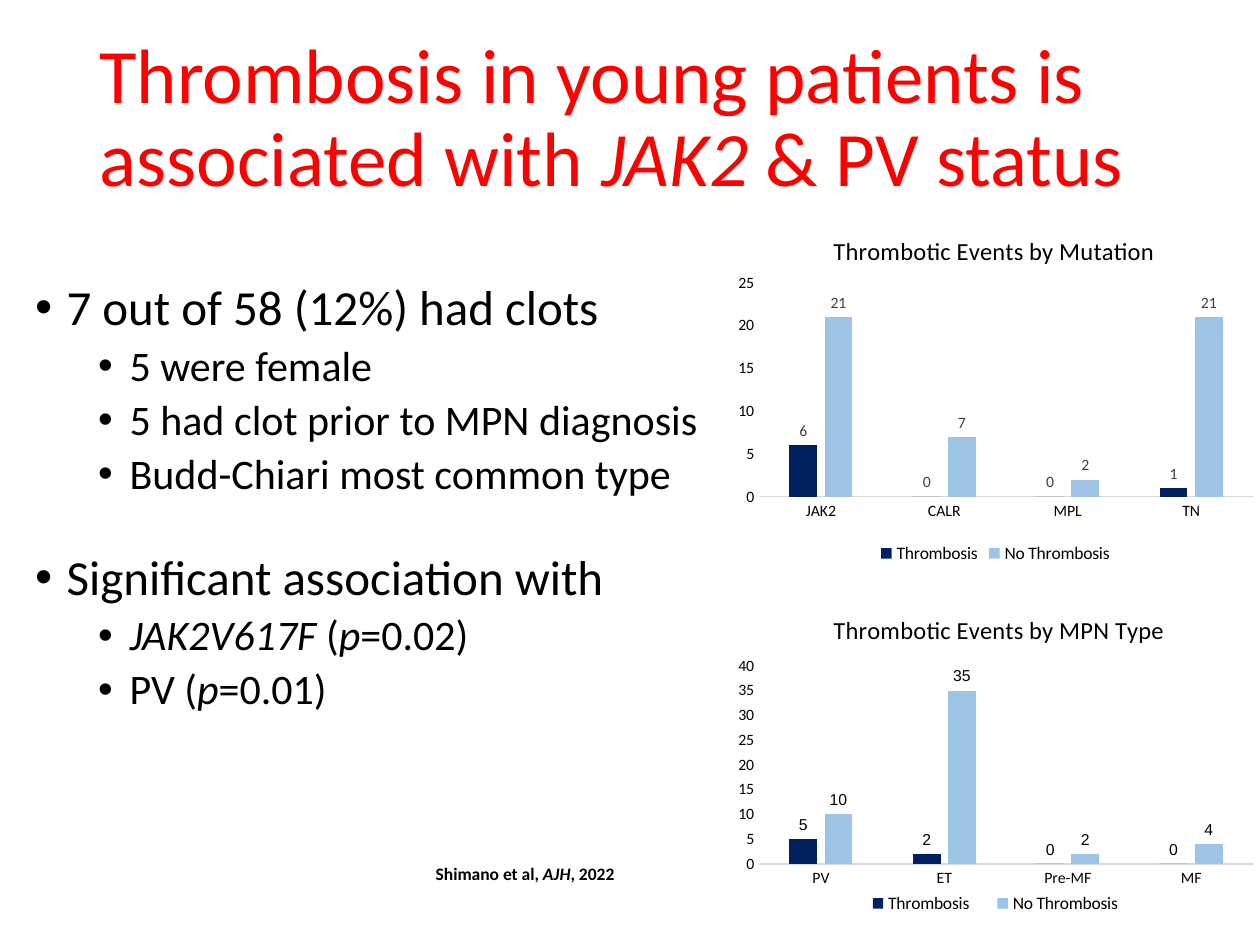
from dataclasses import dataclass

import pptx
import pptx.chart.data
import pptx.dml.color
import pptx.enum.chart
import pptx.enum.text
import pptx.oxml
import pptx.oxml.ns
import pptx.util

Inches = pptx.util.Inches
Pt = pptx.util.Pt


@dataclass(frozen=True)
class Theme:
    font: str = "Calibri"
    label_font: str = "Arial"
    title_color: str = "FF0000"
    text_color: str = "000000"
    muted_color: str = "404040"
    axis_color: str = "D9D9D9"
    series_colors: tuple = ("002060", "9DC3E6")
    title_size: int = 44
    bullet_sizes: tuple = (28, 24)
    chart_title_size: int = 14
    legend_size: int = 10
    axis_size: int = 9
    citation_size: int = 10


THEME = Theme()
SERIES_NAMES = ("Thrombosis", "No Thrombosis")


def rgb(color):
    return pptx.dml.color.RGBColor.from_string(color)


def style_font(font, size, color=THEME.text_color, name=THEME.font, bold=False):
    font.name = name
    font.size = Pt(size)
    font.bold = bold
    font.color.rgb = rgb(color)


def add_text_box(slide, left, top, width, height, wrap=True):
    shape = slide.shapes.add_textbox(Inches(left), Inches(top), Inches(width), Inches(height))
    shape.text_frame.word_wrap = wrap
    return shape.text_frame


def add_runs(paragraph, text):
    """Add text in which asterisks enclose the italic parts."""
    for index, part in enumerate(text.split("*")):
        if part:
            run = paragraph.add_run()
            run.text = part
            if index % 2:
                run.font.italic = True


def add_title(slide, text):
    frame = add_text_box(slide, 0.69, 0.23, 8.62, 1.45)
    frame.vertical_anchor = pptx.enum.text.MSO_ANCHOR.MIDDLE
    paragraph = frame.paragraphs[0]
    add_runs(paragraph, text)
    paragraph.line_spacing = 0.9
    style_font(paragraph.font, THEME.title_size, THEME.title_color)


def set_bullet(paragraph, level):
    properties = paragraph._p.get_or_add_pPr()
    properties.set("marL", str(Inches(0.25 + 0.5 * level)))
    properties.set("indent", str(Inches(-0.25)))
    for tag, name, value in (("a:buFont", "typeface", THEME.label_font), ("a:buChar", "char", "•")):
        element = pptx.oxml.parse_xml(f"<{tag} {pptx.oxml.ns.nsdecls('a')}/>")
        element.set(name, value)
        properties.append(element)


def add_bullets(slide, items):
    """Add (level, space before, text) items as a bulleted list."""
    frame = add_text_box(slide, 0.18, 2.2, 5.65, 4.17)
    for index, (level, space_before, text) in enumerate(items):
        paragraph = frame.add_paragraph() if index else frame.paragraphs[0]
        paragraph.level = level
        set_bullet(paragraph, level)
        add_runs(paragraph, text)
        paragraph.line_spacing = 0.9
        paragraph.space_before = Pt(space_before)
        style_font(paragraph.font, THEME.bullet_sizes[level])


def add_citation(slide, text):
    frame = add_text_box(slide, 3.36, 6.8, 1.64, 0.61, wrap=False)
    paragraph = frame.paragraphs[0]
    add_runs(paragraph, text)
    style_font(paragraph.font, THEME.citation_size, bold=True)


def place_chart_part(element, index, target=None, **fractions):
    """Give a chart part a manual layout, in fractions of the chart's size."""
    for layout in element.findall(pptx.oxml.ns.qn("c:layout")):
        element.remove(layout)
    target_xml = f'<c:layoutTarget val="{target}"/>' if target else ""
    modes = "".join(f'<c:{key}Mode val="edge"/>' for key in ("x", "y"))
    values = "".join(f'<c:{key} val="{value}"/>' for key, value in fractions.items())
    element.insert(index, pptx.oxml.parse_xml(
        f"<c:layout {pptx.oxml.ns.nsdecls('c')}><c:manualLayout>"
        f"{target_xml}{modes}{values}</c:manualLayout></c:layout>"))


def style_axes(chart, maximum):
    for axis in (chart.category_axis, chart.value_axis):
        axis.has_major_gridlines = False
        axis.major_tick_mark = axis.minor_tick_mark = pptx.enum.chart.XL_TICK_MARK.NONE
        style_font(axis.tick_labels.font, THEME.axis_size)
    line = chart.category_axis.format.line
    line.color.rgb = rgb(THEME.axis_color)
    line.width = Pt(0.75)
    chart.value_axis.format.line.fill.background()
    chart.value_axis.minimum_scale = 0
    chart.value_axis.maximum_scale = maximum
    chart.value_axis.major_unit = 5


def style_series(plot, label_color, label_font):
    plot.gap_width = 219
    plot.overlap = -27
    plot.vary_by_categories = False
    for series, color in zip(plot.series, THEME.series_colors):
        series.format.fill.solid()
        series.format.fill.fore_color.rgb = rgb(color)
        labels = series.data_labels
        labels.show_value = True
        labels.position = pptx.enum.chart.XL_LABEL_POSITION.OUTSIDE_END
        style_font(labels.font, THEME.axis_size, label_color, label_font)


def add_column_chart(slide, top, height, title, categories, values, maximum,
                     plot_top, plot_height, label_color, label_font):
    data = pptx.chart.data.CategoryChartData()
    data.categories = categories
    for name, series_values in zip(SERIES_NAMES, values):
        data.add_series(name, series_values)
    chart = slide.shapes.add_chart(
        pptx.enum.chart.XL_CHART_TYPE.COLUMN_CLUSTERED,
        Inches(5.77), Inches(top), Inches(4.26), Inches(height), data).chart
    style_font(chart.font, THEME.legend_size, name=label_font)

    chart.has_title = True
    paragraph = chart.chart_title.text_frame.paragraphs[0]
    paragraph.text = title
    style_font(paragraph.font, THEME.chart_title_size)
    place_chart_part(chart.chart_title._element, 1, x=0.19, y=0.05)

    chart.has_legend = True
    chart.legend.position = pptx.enum.chart.XL_LEGEND_POSITION.BOTTOM
    chart.legend.include_in_layout = False
    style_font(chart.legend.font, THEME.legend_size)

    style_axes(chart, maximum)
    style_series(chart.plots[0], label_color, label_font)
    place_chart_part(chart._chartSpace.chart.plotArea, 0, "inner",
                     x=0.06, y=plot_top, w=0.92, h=plot_height)
    return chart


def main():
    presentation = pptx.Presentation()
    presentation.slide_width = Inches(10)
    presentation.slide_height = Inches(7.5)
    slide = presentation.slides.add_slide(presentation.slide_layouts[6])

    add_title(slide, "Thrombosis in young patients is associated with *JAK2* & PV status")
    add_bullets(slide, [
        (0, 0, "7 out of 58 (12%) had clots"),
        (1, 5, "5 were female"),
        (1, 5, "5 had clot prior to MPN diagnosis"),
        (1, 5, "Budd-Chiari most common type"),
        (0, 31, "Significant association with"),
        (1, 5, "*JAK2V617F *(*p*=0.02)"),
        (1, 5, "PV (*p*=0.01)"),
    ])
    add_column_chart(
        slide, 1.68, 2.83, "Thrombotic Events by Mutation", ("JAK2", "CALR", "MPL", "TN"),
        ((6, 0, 0, 1), (21, 7, 2, 21)), 25, 0.2, 0.6, THEME.muted_color, THEME.font)
    add_citation(slide, "Shimano et al, *AJH*, 2022")
    type_chart = add_column_chart(
        slide, 4.69, 2.71, "Thrombotic Events by MPN Type", ("PV", "ET", "Pre-MF", "MF"),
        ((5, 2, 0, 0), (10, 35, 2, 4)), 40, 0.22, 0.58, THEME.text_color, THEME.label_font)
    place_chart_part(type_chart.legend._element, 1, x=0.23, y=0.87, w=0.54, h=0.09)

    presentation.save("out.pptx")


if __name__ == "__main__":
    main()
